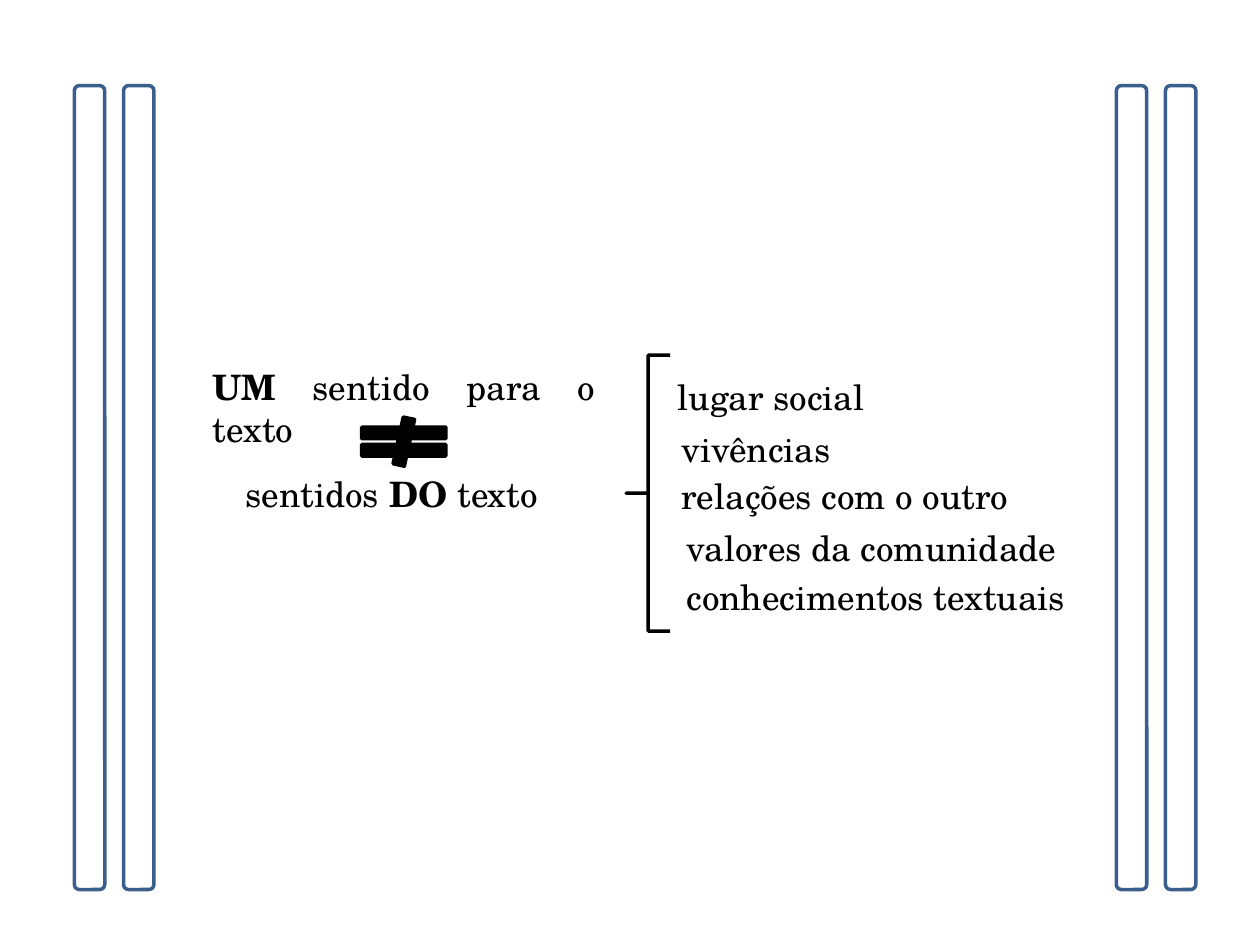
from pptx import Presentation
from pptx.dml.color import RGBColor
from pptx.enum import shapes, text
from pptx.util import Pt

BLACK = RGBColor(0x00, 0x00, 0x00)
WHITE = RGBColor(0xFF, 0xFF, 0xFF)
BLUE = RGBColor(0x3A, 0x5F, 0x8C)


class Painter:
    """Holds the style and the current slide."""

    font = "TeX Gyre Schola"
    size = Pt(20)
    line_width = Pt(2)
    text_height = Pt(31.7)

    def __init__(self, page):
        self.page = page

    def shape(self, kind, left, top, width, height, line, fill=None, adjust=()):
        item = self.page.shapes.add_shape(
            kind, Pt(left), Pt(top), Pt(width), Pt(height))
        item.shadow.inherit = False
        for index, value in enumerate(adjust):
            item.adjustments[index] = value
        if fill is None:
            item.fill.background()
        else:
            item.fill.solid()
            item.fill.fore_color.rgb = fill
        item.line.color.rgb = line
        item.line.width = self.line_width
        return item

    def label(self, left, top, width, *parts):
        """Write one justified paragraph; parts in capitals are bold."""
        box = self.page.shapes.add_textbox(
            Pt(left), Pt(top), Pt(width), self.text_height)
        frame = box.text_frame
        frame.word_wrap = True
        frame.auto_size = text.MSO_AUTO_SIZE.SHAPE_TO_FIT_TEXT
        para = frame.paragraphs[0]
        para.alignment = text.PP_ALIGN.JUSTIFY
        for part in parts:
            span = para.add_run()
            span.text = part
            span.font.name = self.font
            span.font.size = self.size
            span.font.bold = part.isupper()
            span.font.color.rgb = BLACK
        return box


def main():
    deck = Presentation()
    deck.slide_width, deck.slide_height = Pt(720), Pt(540)
    painter = Painter(deck.slides.add_slide(deck.slide_layouts[6]))
    kinds = shapes.MSO_SHAPE

    # Pairs of side bars
    for pair_left in (637.9, 42.5):
        for offset in (0, 28.1):
            painter.shape(kinds.ROUNDED_RECTANGLE, pair_left + offset, 48.9,
                          17.4, 459.4, BLUE, WHITE)

    # Two meanings set against each other
    painter.label(114.5, 205.2, 232.6, "UM", " sentido para o texto")
    painter.shape(kinds.MATH_NOT_EQUAL, 198, 238.3, 65.5, 28.1, BLACK, BLACK,
                  (0.235, 61.411, 0.118))
    painter.label(133.2, 266.4, 195.1, "sentidos ", "DO", " texto")

    # Brace with the sources of meaning
    painter.shape(kinds.LEFT_BRACE, 357.8, 203, 25.2, 157.7, BLACK,
                  adjust=(0, 0.5))
    sources = [
        ("lugar social", 380.2, 211, 195.1),
        ("vivências", 382.3, 240.5, 113),
        ("relações com o outro", 382.3, 267.4, 238.3),
        ("valores da comunidade", 385.2, 297.2, 235.4),
        ("conhecimentos textuais", 385.2, 325.4, 235.4),
    ]
    for source, left, top, width in sources:
        painter.label(left, top, width, source)

    deck.save("out.pptx")


if __name__ == "__main__":
    main()
